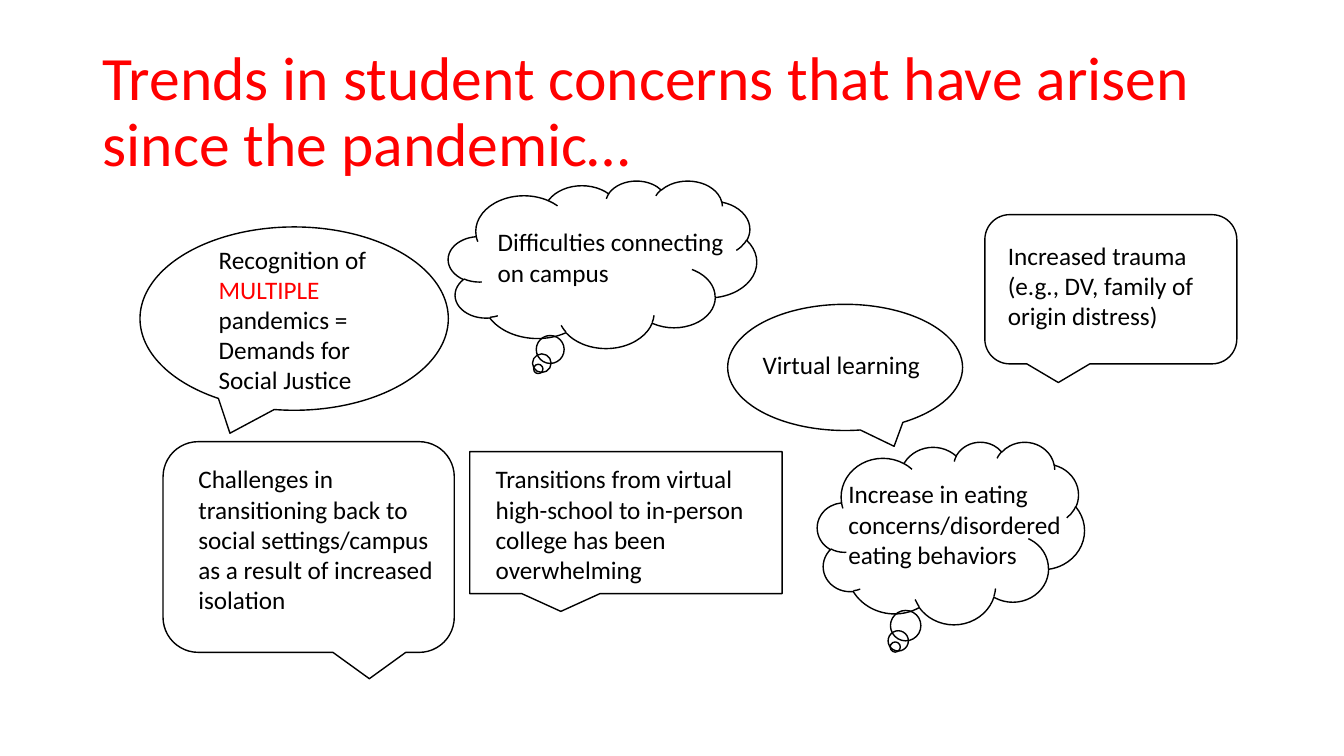
from dataclasses import dataclass

from pptx import Presentation
from pptx.dml.color import RGBColor
from pptx.enum.shapes import MSO_SHAPE as Preset
from pptx.enum.text import MSO_ANCHOR as Anchor, MSO_AUTO_SIZE as AutoSize
from pptx.util import Cm, Pt


@dataclass(frozen=True)
class Theme:
    font: str = "Calibri"
    ink: RGBColor = RGBColor(0, 0, 0)
    accent: RGBColor = RGBColor(255, 0, 0)
    title_size: Pt = Pt(44)
    body_size: Pt = Pt(18)
    outline: Pt = Pt(1)


@dataclass(frozen=True)
class Box:
    left: float
    top: float
    width: float
    height: float

    def inner(self, offset):
        left, top, width, height = offset
        return Box(self.left + left, self.top + top, width, height)

    def lengths(self):
        return Cm(self.left), Cm(self.top), Cm(self.width), Cm(self.height)


THEME = Theme()
TITLE = "Trends in student concerns that have arisen since the pandemic…"
TITLE_BOX = Box(2.34, 1.02, 29.21, 3.68)

# preset, mirrored, bubble box, text offset and size, paragraphs of (text, colour) runs
CONCERNS = [
    (Preset.OVAL_CALLOUT, False, Box(3.53, 5.72, 7.77, 4.62), (1.73, 0.3, 4.85, 4.88),
     [[("Recognition of", THEME.ink)],
      [("MULTIPLE", THEME.accent),
       (" pandemics = Demands for Social Justice", THEME.ink)]]),
    (Preset.CLOUD_CALLOUT, False, Box(11.3, 4.55, 7.77, 4.22), (0.99, 1.04, 6.53, 2.57),
     [[("Difficulties connecting on campus", THEME.ink)]]),
    (Preset.RECTANGULAR_CALLOUT, False, Box(11.84, 11.38, 7.87, 3.58), (0.4, 0.18, 7.54, 3.33),
     [[("Transitions from virtual high-school to in-person college has been overwhelming",
        THEME.ink)]]),
    (Preset.ROUNDED_RECTANGULAR_CALLOUT, True, Box(4.11, 11.13, 7.34, 5.31),
     (0.64, 0.43, 6.53, 4.11),
     [[("Challenges in transitioning back to social settings/campus "
        "as a result of increased isolation", THEME.ink)]]),
    (Preset.OVAL_CALLOUT, True, Box(18.34, 7.67, 5.92, 3.18), (0.63, 1.02, 6.99, 1.02),
     [[("Virtual learning", THEME.ink)]]),
    (Preset.CLOUD_CALLOUT, False, Box(20.6, 11.13, 6.73, 4.6), (0.53, 0.81, 6.02, 3.33),
     [[("Increase in eating concerns/disordered eating behaviors", THEME.ink)]]),
    (Preset.ROUNDED_RECTANGULAR_CALLOUT, False, Box(24.82, 5.41, 6.35, 3.76),
     (0.33, 0.51, 5.99, 3.33),
     [[("Increased trauma (e.g., DV, family of origin distress)", THEME.ink)]]),
]


def apply_format(target, values):
    for name, value in values.items():
        setattr(target, name, value)


def add_text(slide, box, paragraphs, size, frame_format, paragraph_format):
    frame = slide.shapes.add_textbox(*box.lengths()).text_frame
    apply_format(frame, {"word_wrap": True, **frame_format})
    for index, runs in enumerate(paragraphs):
        paragraph = frame.add_paragraph() if index else frame.paragraphs[0]
        apply_format(paragraph, paragraph_format)
        for text, colour in runs:
            run = paragraph.add_run()
            run.text = text
            apply_format(run.font, {"name": THEME.font, "size": size})
            run.font.color.rgb = colour


def add_title(slide, box):
    add_text(slide, box, [[(TITLE, THEME.accent)]], THEME.title_size,
             {"vertical_anchor": Anchor.MIDDLE}, {"line_spacing": 0.9})


def add_callout(slide, box, preset, mirrored, text_offset, paragraphs):
    shape = slide.shapes.add_shape(preset, *box.lengths())
    shape.shadow.inherit = False
    shape.fill.background()
    shape.line.width = THEME.outline
    shape.line.color.rgb = THEME.ink
    if mirrored:
        shape.element.spPr.xfrm.set("flipH", "1")
    add_text(slide, box.inner(text_offset), paragraphs, THEME.body_size,
             {"auto_size": AutoSize.SHAPE_TO_FIT_TEXT}, {})


def main():
    presentation = Presentation()
    apply_format(presentation, {"slide_width": Cm(33.87), "slide_height": Cm(19.05)})
    slide = presentation.slides.add_slide(presentation.slide_layouts[6])
    add_title(slide, TITLE_BOX)
    for preset, mirrored, box, text_offset, paragraphs in CONCERNS:
        add_callout(slide, box, preset, mirrored, text_offset, paragraphs)
    presentation.save("out.pptx")


if __name__ == "__main__":
    main()
